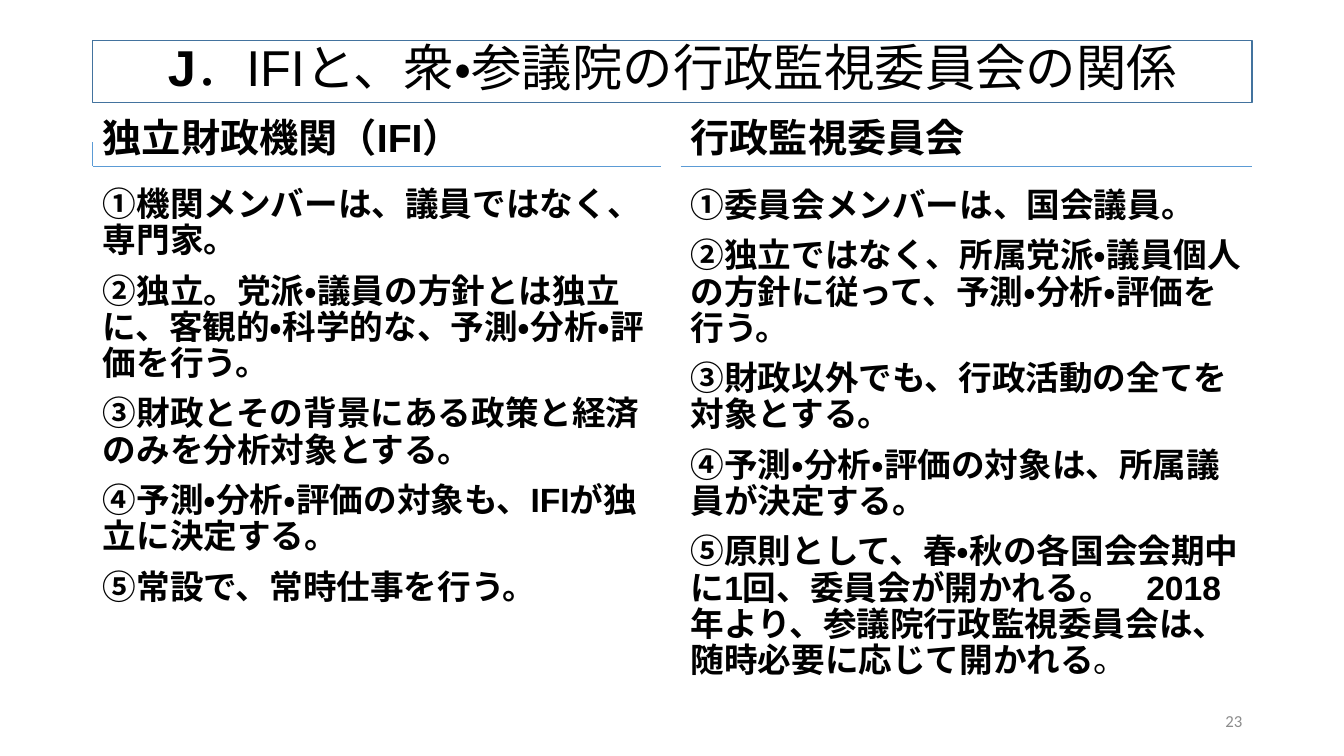
from lxml.etree import SubElement
from pptx import Presentation
from pptx.dml.color import RGBColor
from pptx.enum.lang import MSO_LANGUAGE_ID
from pptx.enum.shapes import MSO_CONNECTOR, MSO_SHAPE
from pptx.enum.text import MSO_ANCHOR, MSO_AUTO_SIZE, PP_ALIGN
from pptx.oxml.ns import qn
from pptx.util import Inches, Pt

LEFT, RIGHT, RULE_Y = 0.92, 12.42, 1.65
TITLE_TOP = 0.4
COMPARISON_LAYOUT = 5 - 1


def prepare(shape, box, anchor):
    """Place a text shape and return its text frame with fixed size and wrapping."""
    shape.left, shape.top, shape.width, shape.height = [Inches(length) for length in box]
    text_frame = shape.text_frame
    text_frame.word_wrap = True
    text_frame.auto_size = MSO_AUTO_SIZE.NONE
    text_frame.vertical_anchor = anchor
    return text_frame


def add_runs(paragraph, runs, size, color="000000"):
    """Add (text, font name, bold) runs that share a size and colour."""
    for text, font_name, bold in runs:
        run = paragraph.add_run()
        run.text = text
        run.font.name = font_name
        run.font.bold = bold
        run.font.size = Pt(size)
        run.font.color.rgb = RGBColor.from_string(color)
        run.font.language_id = MSO_LANGUAGE_ID.JAPANESE


presentation = Presentation()
presentation.slide_width = Inches(13.33)
presentation.slide_height = Inches(7.5)
slide = presentation.slides.add_slide(presentation.slide_layouts[COMPARISON_LAYOUT])

# Title
title_frame = prepare(slide.shapes.title, (LEFT, TITLE_TOP, RIGHT - LEFT, 0.6), MSO_ANCHOR.MIDDLE)
title = title_frame.paragraphs[0]
title.alignment = PP_ALIGN.CENTER
title.line_spacing = 0.9
add_runs(title, [
    ("J", "Arial", True),
    ("．", "Calibri", False),
    ("IFI", "Arial", False),
    ("と、衆・参議院の行政監視委員会の関係", "Calibri", False),
], 36)

# Two compared bodies: left, width, heading top, heading font, heading, points
columns = [
    (LEFT, 5.64, 1.17, "Arial", "独立財政機関（IFI）", [
        "①機関メンバーは、議員ではなく、専門家。",
        "②独立。党派・議員の方針とは独立に、客観的・科学的な、予測・分析・評価を行う。",
        "③財政とその背景にある政策と経済のみを分析対象とする。",
        "④予測・分析・評価の対象も、IFIが独立に決定する。",
        "⑤常設で、常時仕事を行う。",
    ]),
    (6.75, RIGHT - 6.75, 1.18, "Calibri", "行政監視委員会", [
        "①委員会メンバーは、国会議員。",
        "②独立ではなく、所属党派・議員個人の方針に従って、予測・分析・評価を行う。",
        "③財政以外でも、行政活動の全てを対象とする。",
        "④予測・分析・評価の対象は、所属議員が決定する。",
        "⑤原則として、春・秋の各国会会期中に1回、委員会が開かれる。　2018年より、参議院行政監視委員会は、随時必要に応じて開かれる",
    ]),
]
for number, (left, width, top, heading_font, heading, points) in enumerate(columns):
    heading_holder = slide.placeholders[1 + 2 * number]
    points_holder = slide.placeholders[2 + 2 * number]
    heading_frame = prepare(heading_holder, (left, top, width, RULE_Y - top), MSO_ANCHOR.BOTTOM)
    points_top = top + 0.64
    points_frame = prepare(points_holder, (left, points_top, width, 6.77 - points_top), MSO_ANCHOR.TOP)

    add_runs(heading_frame.paragraphs[0], [(heading, heading_font, True)], 28)
    for index, point in enumerate(points):
        paragraph = points_frame.paragraphs[0] if index == 0 else points_frame.add_paragraph()
        add_runs(paragraph, [(point, "Arial", True)], 24)

    for paragraph in [*heading_frame.paragraphs, *points_frame.paragraphs]:
        paragraph.line_spacing = 0.9
        paragraph.space_before = Pt(10)
        properties = paragraph._p.get_or_add_pPr()
        properties.set("marL", "0")
        properties.set("indent", "0")
        SubElement(properties, qn("a:buNone"))

# The closing full stop of the last point is lighter
add_runs(points_frame.paragraphs[-1], [("。", "Calibri", False)], 24)

# Slide number
number_box = slide.shapes.add_textbox(0, 0, 0, 0)
number_frame = prepare(number_box, (RIGHT - 3, 6.95, 3, 0.4), MSO_ANCHOR.MIDDLE)
number_frame.paragraphs[0].alignment = PP_ALIGN.RIGHT
add_runs(number_frame.paragraphs[0], [("23", "Calibri", False)], 12, "8C8C8C")

# Title frame
title_border = slide.shapes.add_shape(
    MSO_SHAPE.RECTANGLE, Inches(LEFT), Inches(TITLE_TOP), Inches(RIGHT - LEFT), Inches(0.62))
title_border.shadow.inherit = False
title_border.fill.background()
title_border.line.color.rgb = RGBColor.from_string("43739E")
title_border.line.width = Pt(1)

# Rules under the headings, with a short upright at the left edge
rules = [(LEFT, RULE_Y - 0.24, LEFT, RULE_Y)]
rules += [(left, RULE_Y, left + width, RULE_Y) for left, width, *_ in columns]
for ends in rules:
    rule = slide.shapes.add_connector(MSO_CONNECTOR.STRAIGHT, *[Inches(length) for length in ends])
    rule.line.color.rgb = RGBColor.from_string("5B9BD5")
    rule.line.width = Pt(0.5)
    SubElement(rule._element.spPr, qn("a:effectLst"))

presentation.save("out.pptx")
